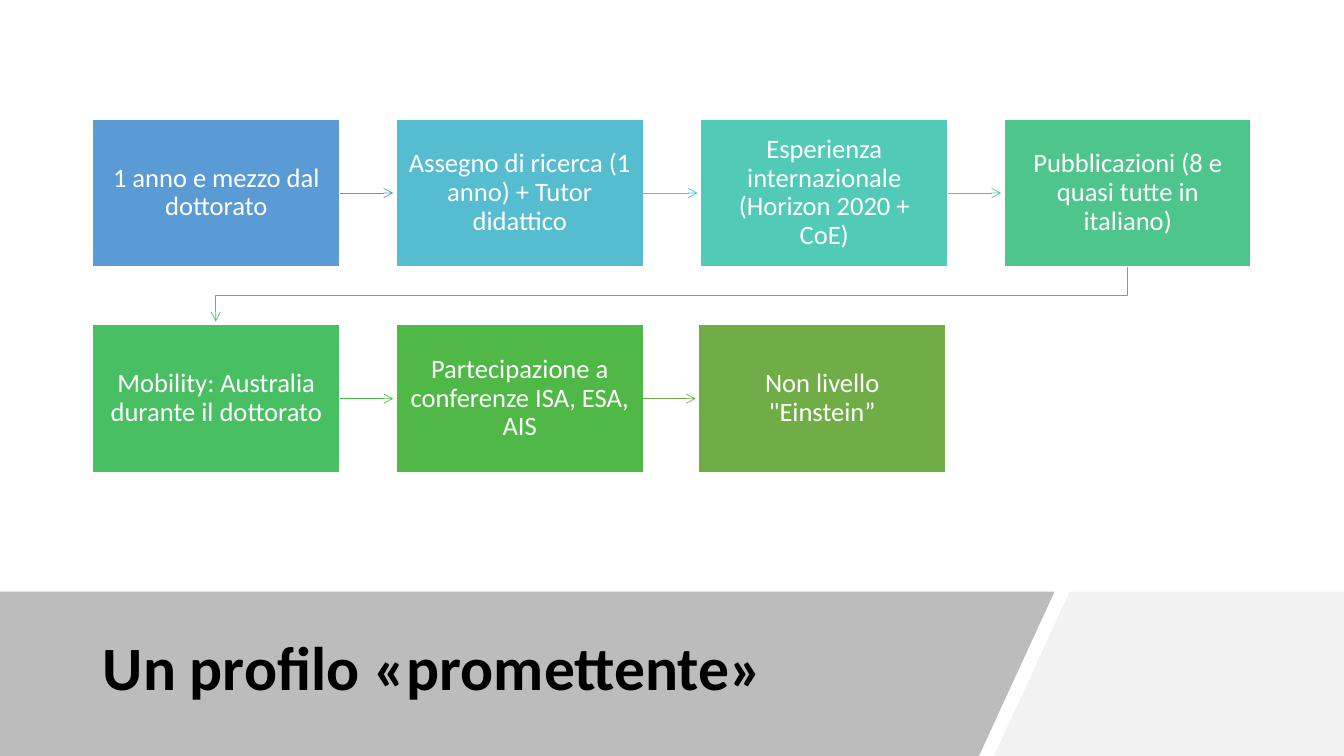
"""Build the slide "Un profilo «promettente»" with its chain of seven career steps."""
from dataclasses import dataclass
from itertools import pairwise

from lxml.etree import SubElement
from pptx import Presentation
from pptx.dml.color import RGBColor
from pptx.enum.shapes import MSO_CONNECTOR, MSO_SHAPE
from pptx.enum.text import MSO_ANCHOR, PP_ALIGN
from pptx.oxml.ns import qn
from pptx.shapes.autoshape import Shape
from pptx.shapes.connector import Connector
from pptx.slide import Slide
from pptx.text.text import TextFrame
from pptx.util import Emu, Pt

RECTANGLE = MSO_SHAPE.RECTANGLE
STRAIGHT = MSO_CONNECTOR.STRAIGHT
MIDDLE = MSO_ANCHOR.MIDDLE
LEFT, CENTER = PP_ALIGN.LEFT, PP_ALIGN.CENTER

PX = 9144
PAGE_WIDTH, PAGE_HEIGHT = 1333, 750
BOX_WIDTH, BOX_HEIGHT = 245, 147
FIRST_ROW, SECOND_ROW = 118, 322
INSET_X, INSET_Y = 12, 13
ARROW_GAP = 3
RIGHT_SIDE = 3
BAND_TOP = 587
FONT = "Calibri"

WHITE = RGBColor(0xFF, 0xFF, 0xFF)
BLACK = RGBColor(0x00, 0x00, 0x00)
DARK_GREY = RGBColor(0x59, 0x59, 0x59)
LIGHT_GREY = RGBColor(0xF2, 0xF2, 0xF2)
BLUE = RGBColor(0x5B, 0x9B, 0xD5)
SKY = RGBColor(0x56, 0xBC, 0xD0)
SKY_ARROW = RGBColor(0x55, 0xC3, 0xCF)
TEAL = RGBColor(0x52, 0xCA, 0xB8)
TEAL_ARROW = RGBColor(0x50, 0xC8, 0xA7)
MINT = RGBColor(0x4D, 0xC5, 0x8D)
MINT_ARROW = RGBColor(0x4B, 0xC1, 0x74)
GREEN = RGBColor(0x49, 0xBF, 0x64)
GREEN_ARROW = RGBColor(0x4A, 0xBA, 0x46)
LEAF = RGBColor(0x50, 0xB8, 0x46)
OLIVE = RGBColor(0x70, 0xAD, 0x47)

Point = tuple[int, int]


@dataclass(frozen=True)
class Step:
    """One box of the chain, with the colour of the arrow that leaves it."""

    left: int
    top: int
    text: str
    fill: RGBColor
    arrow: RGBColor | None = None


STEPS = (
    Step(92, FIRST_ROW, "1 anno e mezzo dal dottorato", BLUE, BLUE),
    Step(393, FIRST_ROW, "Assegno di ricerca (1 anno) + Tutor didattico", SKY, SKY_ARROW),
    Step(695, FIRST_ROW, "Esperienza internazionale (Horizon 2020 + CoE)", TEAL, TEAL_ARROW),
    Step(996, FIRST_ROW, "Pubblicazioni (8 e quasi tutte in italiano)", MINT, MINT_ARROW),
    Step(92, SECOND_ROW, "Mobility: Australia durante il dottorato", GREEN, GREEN_ARROW),
    Step(393, SECOND_ROW, "Partecipazione a conferenze ISA, ESA, AIS", LEAF, OLIVE),
    Step(693, SECOND_ROW, 'Non livello "Einstein”', OLIVE),
)


def px(count: int) -> Emu:
    """Turn pixels into EMU."""
    return Emu(count * PX)


def write(frame: TextFrame, text: str, size: int, color: RGBColor, align: PP_ALIGN, bold: bool) -> None:
    """Write one paragraph, centred vertically."""
    frame.word_wrap = True
    frame.vertical_anchor = MIDDLE
    para = frame.paragraphs[0]
    para.alignment = align
    para.line_spacing = 0.9
    span = para.add_run()
    span.text = text
    span.font.name = FONT
    span.font.size = Pt(size)
    span.font.bold = bold
    span.font.color.rgb = color


def add_outline(page: Slide, points: tuple[Point, ...], close: bool) -> Shape:
    """Add a freeform through the points."""
    builder = page.shapes.build_freeform(*points[0], scale=float(PX))
    builder.add_line_segments(points[1:], close=close)
    outline = builder.convert_to_shape()
    outline.shadow.inherit = False
    return outline


def add_panel(page: Slide, points: tuple[Point, ...], color: RGBColor, opacity: int) -> None:
    """Add a footer panel behind the title."""
    panel = add_outline(page, points, close=True)
    panel.fill.solid()
    panel.fill.fore_color.rgb = color
    if opacity < 100:
        tint = panel.element.find(f".//{qn('a:srgbClr')}")
        SubElement(tint, qn("a:alpha"), val=str(opacity * 1000))
    panel.line.fill.background()
    page.shapes.title.element.addprevious(panel.element)


def add_title(page: Slide) -> None:
    """Place and format the title."""
    title = page.shapes.title
    title.left, title.top, title.width, title.height = px(92), px(605), px(883), px(120)
    write(title.text_frame, "Un profilo «promettente»", 44, BLACK, LEFT, True)


def add_box(page: Slide, step: Step) -> Shape:
    """Draw the box of a step."""
    box = page.shapes.add_shape(RECTANGLE, px(step.left), px(step.top), px(BOX_WIDTH), px(BOX_HEIGHT))
    box.shadow.inherit = False
    box.fill.solid()
    box.fill.fore_color.rgb = step.fill
    box.line.color.rgb = WHITE
    box.line.width = Pt(1)
    frame = box.text_frame
    frame.margin_left = frame.margin_right = px(INSET_X)
    frame.margin_top = frame.margin_bottom = px(INSET_Y)
    write(frame, step.text, 19, WHITE, CENTER, False)
    return box


def style_arrow(arrow: Connector | Shape, color: RGBColor) -> None:
    """Give an arrow its colour, width and head."""
    arrow.line.color.rgb = color
    arrow.line.width = Pt(0.5)
    SubElement(arrow.element.find(f".//{qn('a:ln')}"), qn("a:tailEnd"), type="arrow")


def add_straight_arrow(page: Slide, box: Shape, step: Step, following: Step) -> None:
    """Point from a box to the next one in its row."""
    middle = px(step.top) + px(BOX_HEIGHT) // 2
    arrow = page.shapes.add_connector(
        STRAIGHT, px(step.left + BOX_WIDTH), middle, px(following.left - ARROW_GAP), middle
    )
    arrow.begin_connect(box, RIGHT_SIDE)
    style_arrow(arrow, step.arrow)
    SubElement(arrow.element.spPr, qn("a:effectLst"))


def add_return_arrow(page: Slide, step: Step, following: Step) -> None:
    """Lead from the end of a row to the start of the next."""
    start_x, end_x = (item.left + BOX_WIDTH // 2 for item in (step, following))
    bottom = step.top + BOX_HEIGHT
    bend = (bottom + following.top) // 2
    points = ((start_x, bottom), (start_x, bend), (end_x, bend), (end_x, following.top - ARROW_GAP))
    arrow = add_outline(page, points, close=False)
    arrow.fill.background()
    style_arrow(arrow, step.arrow)


def main() -> None:
    """Build and save the deck."""
    deck = Presentation()
    deck.slide_width, deck.slide_height = px(PAGE_WIDTH), px(PAGE_HEIGHT)
    page = deck.slides.add_slide(deck.slide_layouts[5])
    right_panel = ((1061, BAND_TOP), (PAGE_WIDTH, BAND_TOP), (PAGE_WIDTH, PAGE_HEIGHT), (986, PAGE_HEIGHT))
    left_panel = ((0, BAND_TOP), (1046, BAND_TOP), (971, PAGE_HEIGHT), (0, PAGE_HEIGHT))
    add_panel(page, right_panel, LIGHT_GREY, 100)
    add_panel(page, left_panel, DARK_GREY, 40)
    add_title(page)
    boxes = [add_box(page, step) for step in STEPS]
    for box, (step, following) in zip(boxes, pairwise(STEPS)):
        if step.top == following.top:
            add_straight_arrow(page, box, step, following)
        else:
            add_return_arrow(page, step, following)
    deck.save("out.pptx")


if __name__ == "__main__":
    main()
